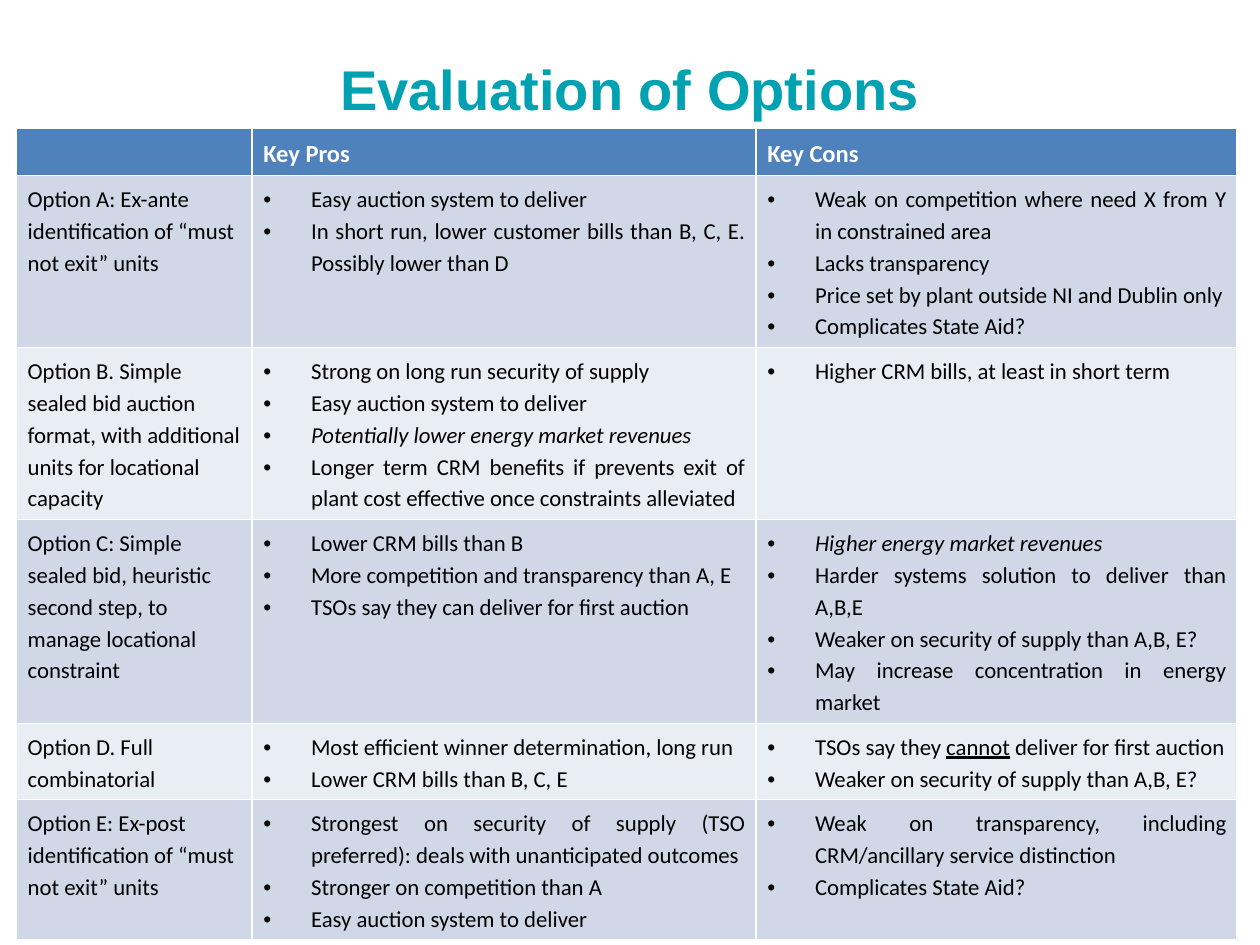
import pptx
import pptx.dml.color
import pptx.enum.text
import pptx.util
from lxml import etree

ALIGN = pptx.enum.text.PP_ALIGN
DRAWING = "{http://schemas.openxmlformats.org/drawingml/2006/main}"
HEADER_FILL, ODD_FILL, EVEN_FILL = "4F81BD", "D0D8E8", "E9EDF4"
COLUMN_SHARES = [0.187, 0.4, 0.382]
LINE_HEIGHT, CELL_PADDING = 0.253, 0.1
INDENT = pptx.util.Inches(0.38)

# Asterisks mark italic text, underscores mark underlined text.
HEADINGS = ["", "Key Pros", "Key Cons"]
OPTIONS = [
    (5, "Option A: Ex-ante identification of “must not exit” units",
     ["Easy auction system to deliver",
      "In short run, lower customer bills than B, C, E. Possibly lower than D"],
     ["Weak on competition where need X from Y in constrained area",
      "Lacks transparency",
      "Price set by plant outside NI and Dublin only",
      "Complicates State Aid?"]),
    (5, "Option B. Simple sealed bid auction format, with additional units "
        "for locational capacity",
     ["Strong on long run security of supply",
      "Easy auction system to deliver",
      "*Potentially lower energy market revenues*",
      "Longer term CRM benefits if prevents exit of plant cost effective "
      "once constraints alleviated"],
     ["Higher CRM bills, at least in short term"]),
    (6, "Option C: Simple sealed bid, heuristic second step, to manage "
        "locational constraint",
     ["Lower CRM bills than B",
      "More competition and transparency than A, E",
      "TSOs say they can deliver for first auction"],
     ["*Higher energy market revenues*",
      "Harder systems solution to deliver than A,B,E",
      "Weaker on security of supply than A,B, E?",
      "May increase concentration in energy market"]),
    (2, "Option D. Full combinatorial",
     ["Most efficient winner determination, long run",
      "Lower CRM bills than B, C, E"],
     ["TSOs say they _cannot_ deliver for first auction",
      "Weaker on security of supply than A,B, E?"]),
    (4, "Option E: Ex-post identification of “must not exit” units",
     ["Strongest on security of supply (TSO preferred): deals with "
      "unanticipated outcomes",
      "Stronger on competition than A",
      "Easy auction system to deliver"],
     ["Weak on transparency, including CRM/ancillary service distinction",
      "Complicates State Aid?"]),
]


def color(hex_string):
    return pptx.dml.color.RGBColor.from_string(hex_string)


def write(box, lines, font="Calibri", size=13, ink="000000", bold=False,
          align=ALIGN.LEFT, spacing=1.15, bullet=False):
    """Fill a text frame with one paragraph per line, reading * and _ marks."""
    for number, line in enumerate(lines):
        para = box.add_paragraph() if number else box.paragraphs[0]
        para.alignment, para.line_spacing = align, spacing
        if bullet:
            layout = para._p.get_or_add_pPr()
            layout.set("marL", str(INDENT))
            layout.set("indent", str(-INDENT))
            etree.SubElement(layout, DRAWING + "buFont", typeface="Arial")
            etree.SubElement(layout, DRAWING + "buChar", char="•")
        if not line:
            etree.SubElement(para._p, DRAWING + "endParaRPr", sz=str(size * 100))
            continue
        for part, text in enumerate(line.strip("*").split("_")):
            span = para.add_run()
            span.text = text
            span.font.name, span.font.size = font, pptx.util.Pt(size)
            span.font.color.rgb, span.font.bold = color(ink), bold
            span.font.italic = line.startswith("*")
            span.font.underline = part % 2 == 1


deck = pptx.Presentation()
deck.slide_width, deck.slide_height = pptx.util.Inches(10), pptx.util.Inches(7.5)
width, height = deck.slide_width, deck.slide_height
page = deck.slides.add_slide(deck.slide_layouts[5])

title = page.shapes.title
title.left, title.top = int(width * 0.05), int(height * 0.04)
title.width, title.height = int(width * 0.9), pptx.util.Inches(0.8)
title.text_frame.vertical_anchor = pptx.enum.text.MSO_ANCHOR.MIDDLE
write(title.text_frame, ["Evaluation of Options"], font="Arial", size=32,
      ink="00A1B1", bold=True, align=ALIGN.CENTER, spacing=1.0)

line_counts = [1] + [option[0] for option in OPTIONS]
row_heights = [pptx.util.Inches(CELL_PADDING + LINE_HEIGHT * count)
               for count in line_counts]
table = page.shapes.add_table(
    len(row_heights), len(COLUMN_SHARES), int(width * 0.013), pptx.util.Inches(1.02),
    int(width * sum(COLUMN_SHARES)), sum(row_heights)).table
for column, share in zip(table.columns, COLUMN_SHARES):
    column.width = int(width * share)
for row, row_height in zip(table.rows, row_heights):
    row.height = row_height

for column, heading in enumerate(HEADINGS):
    write(table.cell(0, column).text_frame, [heading], size=14, ink="FFFFFF",
          bold=True, align=ALIGN.JUSTIFY)
for row, (count, name, pros, cons) in enumerate(OPTIONS, start=1):
    write(table.cell(row, 0).text_frame, [name])
    for column, points in enumerate([pros, cons], start=1):
        write(table.cell(row, column).text_frame, points,
              align=ALIGN.JUSTIFY, bullet=True)

for number, row in enumerate(table.rows):
    band = ODD_FILL if number % 2 else EVEN_FILL
    for cell in row.cells:
        cell.fill.solid()
        cell.fill.fore_color.rgb = color(band if number else HEADER_FILL)
        cell.margin_left = cell.margin_right = pptx.util.Inches(0.09)
        cell.margin_top = cell.margin_bottom = pptx.util.Inches(CELL_PADDING / 2)

deck.save("out.pptx")
